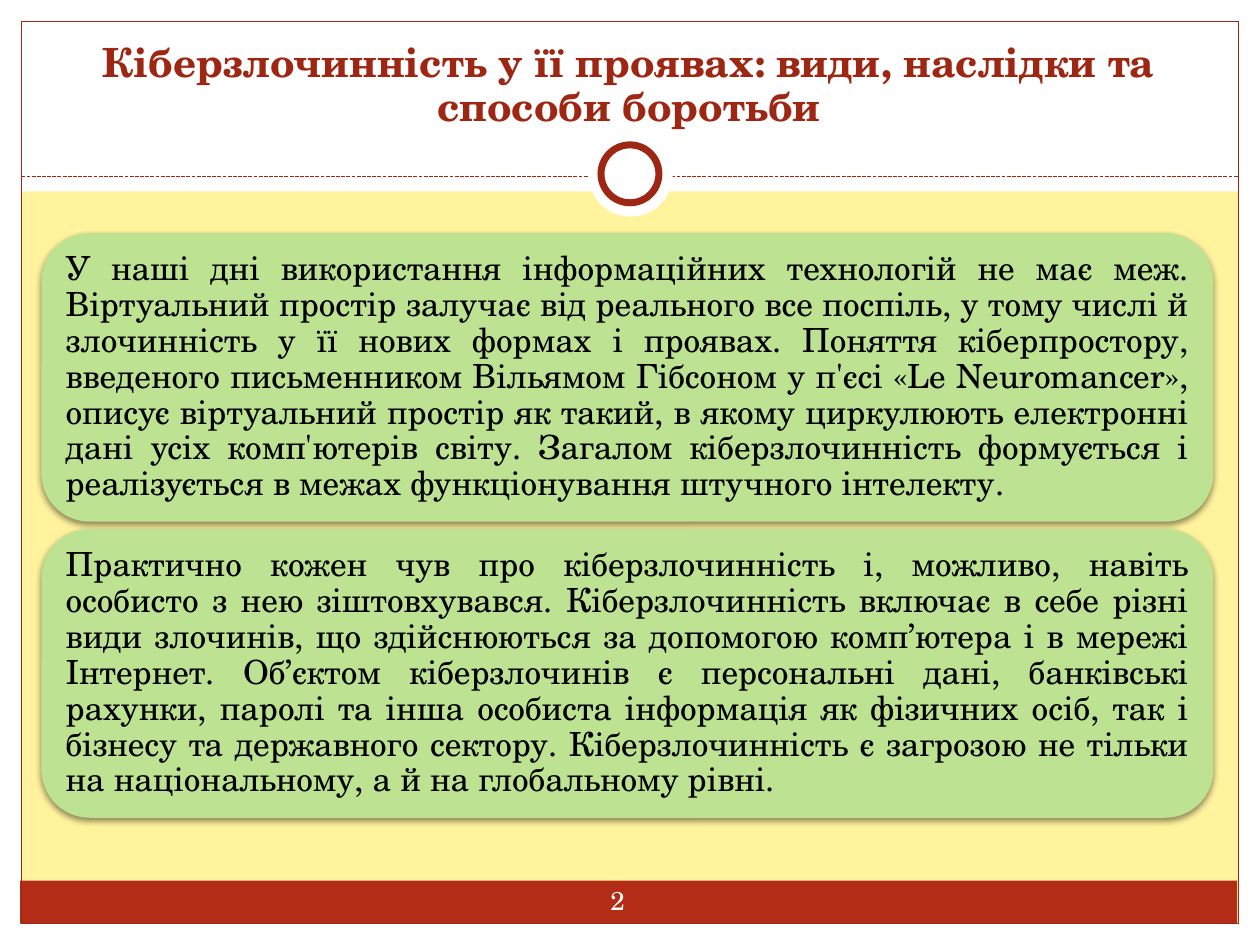
from lxml import etree
from pptx import Presentation
from pptx.dml.color import RGBColor
from pptx.enum.dml import MSO_LINE
from pptx.enum.shapes import MSO_CONNECTOR, MSO_SHAPE
from pptx.enum.text import MSO_ANCHOR, MSO_AUTO_SIZE, PP_ALIGN
from pptx.oxml.ns import qn
from pptx.util import Inches, Pt

RECTANGLE, ROUNDED, OVAL = MSO_SHAPE.RECTANGLE, MSO_SHAPE.ROUNDED_RECTANGLE, MSO_SHAPE.OVAL
CENTER, JUSTIFY = PP_ALIGN.CENTER, PP_ALIGN.JUSTIFY
MIDDLE, BOTTOM = MSO_ANCHOR.MIDDLE, MSO_ANCHOR.BOTTOM

YELLOW = RGBColor(0xFF, 0xF3, 0x9D)
WHITE = RGBColor(0xFF, 0xFF, 0xFF)
BLACK = RGBColor(0x00, 0x00, 0x00)
RED = RGBColor(0xB3, 0x2C, 0x16)
DARK_RED = RGBColor(0x9E, 0x27, 0x13)
GREEN = RGBColor(0xBC, 0xE2, 0x92)
FONT = "TeX Gyre Schola"

TITLE = "Кіберзлочинність у її проявах: види, наслідки та способи боротьби"
STATEMENTS = [
    "У наші дні використання інформаційних технологій не має меж. Віртуальний простір "
    "залучає від реального все поспіль, у тому числі й злочинність у її нових формах і "
    "проявах. Поняття кіберпростору, введеного письменником Вільямом Гібсоном у п'єсі "
    "«Le Neuromancer», описує віртуальний простір як такий, в якому циркулюють електронні "
    "дані усіх комп'ютерів світу. Загалом кіберзлочинність формується і реалізується в "
    "межах функціонування штучного інтелекту.",
    "Практично кожен чув про кіберзлочинність і, можливо, навіть особисто з нею "
    "зіштовхувався. Кіберзлочинність включає в себе різні види злочинів, що здійснюються "
    "за допомогою комп’ютера і в мережі Інтернет. Об’єктом кіберзлочинів є персональні "
    "дані, банківські рахунки, паролі та інша особиста інформація як фізичних осіб, так і "
    "бізнесу та державного сектору. Кіберзлочинність є загрозою не тільки на "
    "національному, а й на глобальному рівні.",
]


def add_box(kind, left, top, width, height, fill=None, line=None, weight=0.75):
    box = slide.shapes.add_shape(kind, Inches(left), Inches(top), Inches(width), Inches(height))
    box.shadow.inherit = False
    if fill is None:
        box.fill.background()
    else:
        box.fill.solid()
        box.fill.fore_color.rgb = fill
    if line is None:
        box.line.fill.background()
    else:
        box.line.color.rgb = line
        box.line.width = Pt(weight)
    return box


def write(shape, text, size, color, align=CENTER, anchor=MIDDLE, inset=0.08, spacing=0.9, bold=False):
    frame = shape.text_frame
    frame.word_wrap = True
    frame.auto_size = MSO_AUTO_SIZE.NONE
    frame.vertical_anchor = anchor
    frame.margin_left = frame.margin_right = Inches(inset)
    frame.margin_top = frame.margin_bottom = Inches(inset)
    para = frame.paragraphs[0]
    para.alignment = align
    para.line_spacing = spacing
    span = para.add_run()
    span.text = text
    span.font.name = FONT
    span.font.size = Pt(size)
    span.font.bold = bold
    span.font.color.rgb = color


deck = Presentation()
deck.slide_width, deck.slide_height = Inches(10), Inches(7.5)
slide = deck.slides.add_slide(deck.slide_layouts.get_by_name("Title Only"))
slide.background.fill.solid()
slide.background.fill.fore_color.rgb = YELLOW

# White margins, footer band and frame
for margin in [(0, 7.33, 10, 0.17), (0, 0, 10, 1.52), (0, 0, 0.17, 7.5), (9.83, 0, 0.17, 7.5)]:
    add_box(RECTANGLE, *margin, fill=WHITE)
add_box(RECTANGLE, 0.16, 6.99, 9.66, 0.34, fill=RED)
add_box(RECTANGLE, 0.17, 0.17, 9.66, 7.16, line=DARK_RED)

# Dashed divider with a ring
divider = slide.shapes.add_connector(
    MSO_CONNECTOR.STRAIGHT, Inches(0.17), Inches(1.4), Inches(9.83), Inches(1.4))
divider.line.color.rgb = DARK_RED
divider.line.width = Pt(0.75)
divider.line.dash_style = MSO_LINE.SQUARE_DOT
etree.SubElement(divider._element.spPr, qn("a:effectLst"))
add_box(OVAL, 4.67, 1.05, 0.67, 0.67, fill=WHITE)
add_box(OVAL, 4.77, 1.15, 0.46, 0.46, fill=WHITE, line=DARK_RED, weight=4)

# The title goes in front of the white margins
title = slide.shapes.title
title.left, title.top, title.width, title.height = Inches(0.33), Inches(0.25), Inches(9.33), Inches(0.83)
write(title, TITLE, 23, DARK_RED, anchor=BOTTOM, inset=0.05, bold=True)
slide.shapes._spTree.append(title._element)

# Statement cards with a soft shadow below
for index, statement in enumerate(STATEMENTS):
    card = add_box(ROUNDED, 0.33, 1.85 + index * 2.35, 9.3, 2.29, fill=GREEN)
    effects = card._element.spPr.find(qn("a:effectLst"))
    shadow = etree.SubElement(effects, qn("a:outerShdw"), blurRad=str(Pt(4)), dist=str(Pt(2)),
                              dir="5400000", rotWithShape="0")
    shade = etree.SubElement(shadow, qn("a:srgbClr"), val=str(BLACK))
    etree.SubElement(shade, qn("a:alpha"), val="45000")
    write(card, statement, 19, BLACK, align=JUSTIFY)

page_number = slide.shapes.add_textbox(Inches(4.69), Inches(6.98), Inches(0.42), Inches(0.33))
write(page_number, "2", 14.8, WHITE, inset=0.05, spacing=1.0)

deck.save("out.pptx")
